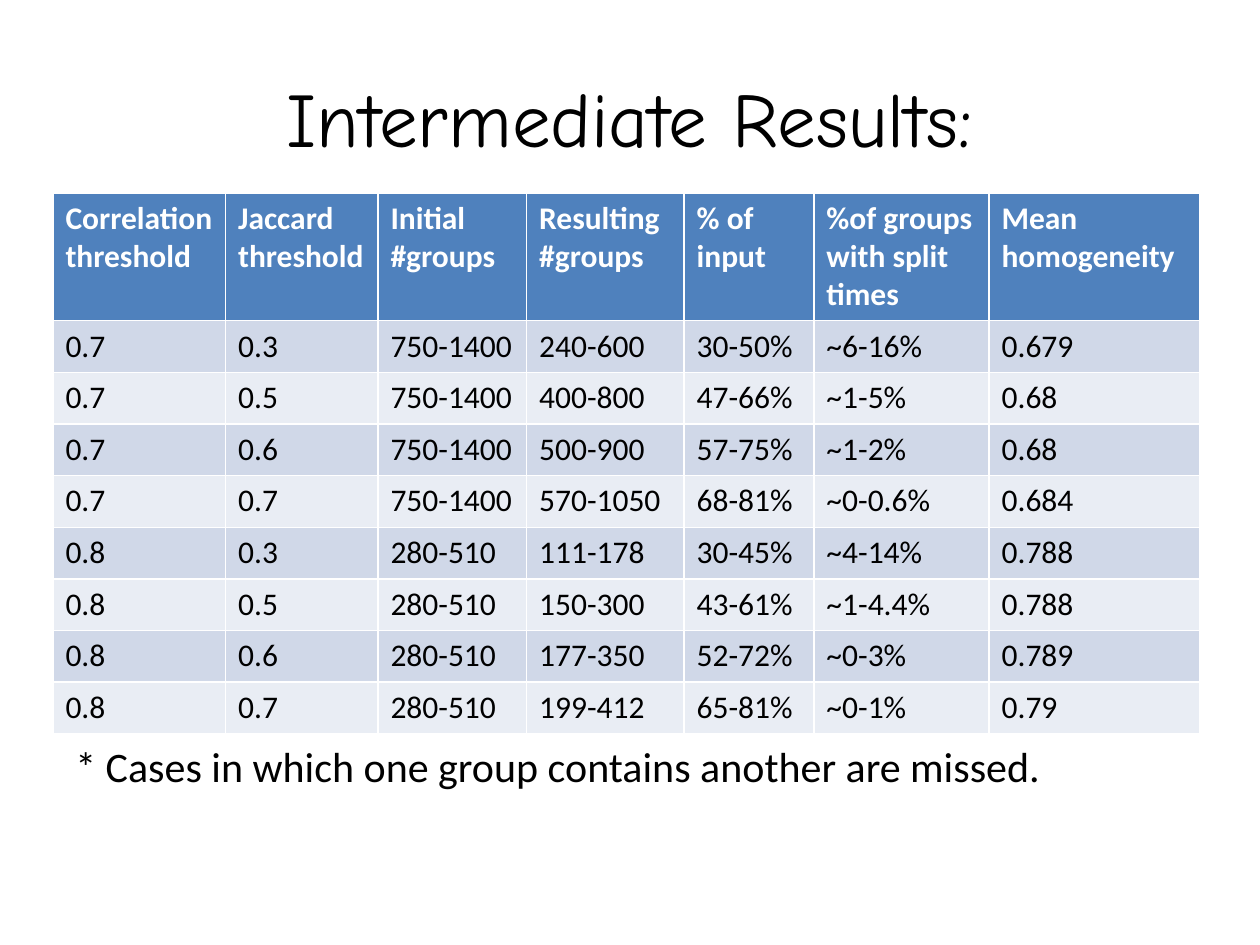
from pptx import Presentation
from pptx.dml.color import RGBColor
from pptx.enum.text import MSO_ANCHOR, PP_ALIGN
from pptx.util import Inches, Pt

HEADERS = ["Correlation threshold", "Jaccard threshold", "Initial #groups",
           "Resulting #groups", "% of input", "%of groups with split times",
           "Mean homogeneity"]
RESULTS = [
    ["0.7", "0.3", "750-1400", "240-600", "30-50%", "~6-16%", "0.679"],
    ["0.7", "0.5", "750-1400", "400-800", "47-66%", "~1-5%", "0.68"],
    ["0.7", "0.6", "750-1400", "500-900", "57-75%", "~1-2%", "0.68"],
    ["0.7", "0.7", "750-1400", "570-1050", "68-81%", "~0-0.6%", "0.684"],
    ["0.8", "0.3", "280-510", "111-178", "30-45%", "~4-14%", "0.788"],
    ["0.8", "0.5", "280-510", "150-300", "43-61%", "~1-4.4%", "0.788"],
    ["0.8", "0.6", "280-510", "177-350", "52-72%", "~0-3%", "0.789"],
    ["0.8", "0.7", "280-510", "199-412", "65-81%", "~0-1%", "0.79"],
]
COLUMN_WIDTHS = [1.37, 1.21, 1.18, 1.25, 1.03, 1.39, 1.67]
ROW_HEIGHT = 0.41
HEADER_FILL = "4F81BD"
BAND_FILLS = ["E9EDF4", "D0D8E8"]

TITLE_FONT = {"name": "Comic Neue", "size": Pt(44), "bold": False}
HEADER_FONT = {"name": "Calibri", "size": Pt(18), "bold": True}
BODY_FONT = {"name": "Calibri", "size": Pt(18), "bold": False}
NOTE_FONT = {"name": "Calibri", "size": Pt(24), "bold": False}


def color(hex_string):
    return RGBColor.from_string(hex_string)


def set_attributes(target, values):
    for name, value in values.items():
        setattr(target, name, value)


def write_text(text_frame, text, font_values, font_color="000000"):
    paragraph = text_frame.paragraphs[0]
    run = paragraph.add_run()
    run.text = text
    set_attributes(run.font, font_values)
    run.font.color.rgb = color(font_color)
    return paragraph


def add_title(slide, text):
    title = slide.shapes.title
    set_attributes(title, {"left": Inches(0.5), "top": Inches(0.3),
                           "width": Inches(9), "height": Inches(1.25)})
    title.text_frame.vertical_anchor = MSO_ANCHOR.MIDDLE
    write_text(title.text_frame, text, TITLE_FONT).alignment = PP_ALIGN.CENTER


def fill_cell(cell, text, fill, font_values, font_color):
    cell.fill.solid()
    cell.fill.fore_color.rgb = color(fill)
    write_text(cell.text_frame, text, font_values, font_color)


def add_results_table(slide):
    rows = [HEADERS] + RESULTS
    table = slide.shapes.add_table(
        len(rows), len(HEADERS), Inches(0.42), Inches(1.53),
        Inches(sum(COLUMN_WIDTHS)), Inches(ROW_HEIGHT * len(rows))).table
    for column, width in zip(table.columns, COLUMN_WIDTHS):
        column.width = Inches(width)
    for row_index, values in enumerate(rows):
        table.rows[row_index].height = Inches(ROW_HEIGHT)
        if row_index == 0:
            style = (HEADER_FILL, HEADER_FONT, "FFFFFF")
        else:
            style = (BAND_FILLS[row_index % 2], BODY_FONT, "000000")
        for column_index, text in enumerate(values):
            fill_cell(table.cell(row_index, column_index), text, *style)


def add_note(slide, text):
    note = slide.shapes.add_textbox(Inches(0.5), Inches(5.83), Inches(9), Inches(0.5))
    note.text_frame.word_wrap = True
    write_text(note.text_frame, text, NOTE_FONT)


def main():
    presentation = Presentation()
    set_attributes(presentation, {"slide_width": Inches(10), "slide_height": Inches(7.5)})
    slide = presentation.slides.add_slide(presentation.slide_layouts[5])
    add_title(slide, "Intermediate Results:")
    add_results_table(slide)
    add_note(slide, "* Cases in which one group contains another are missed.")
    presentation.save("out.pptx")


if __name__ == "__main__":
    main()
